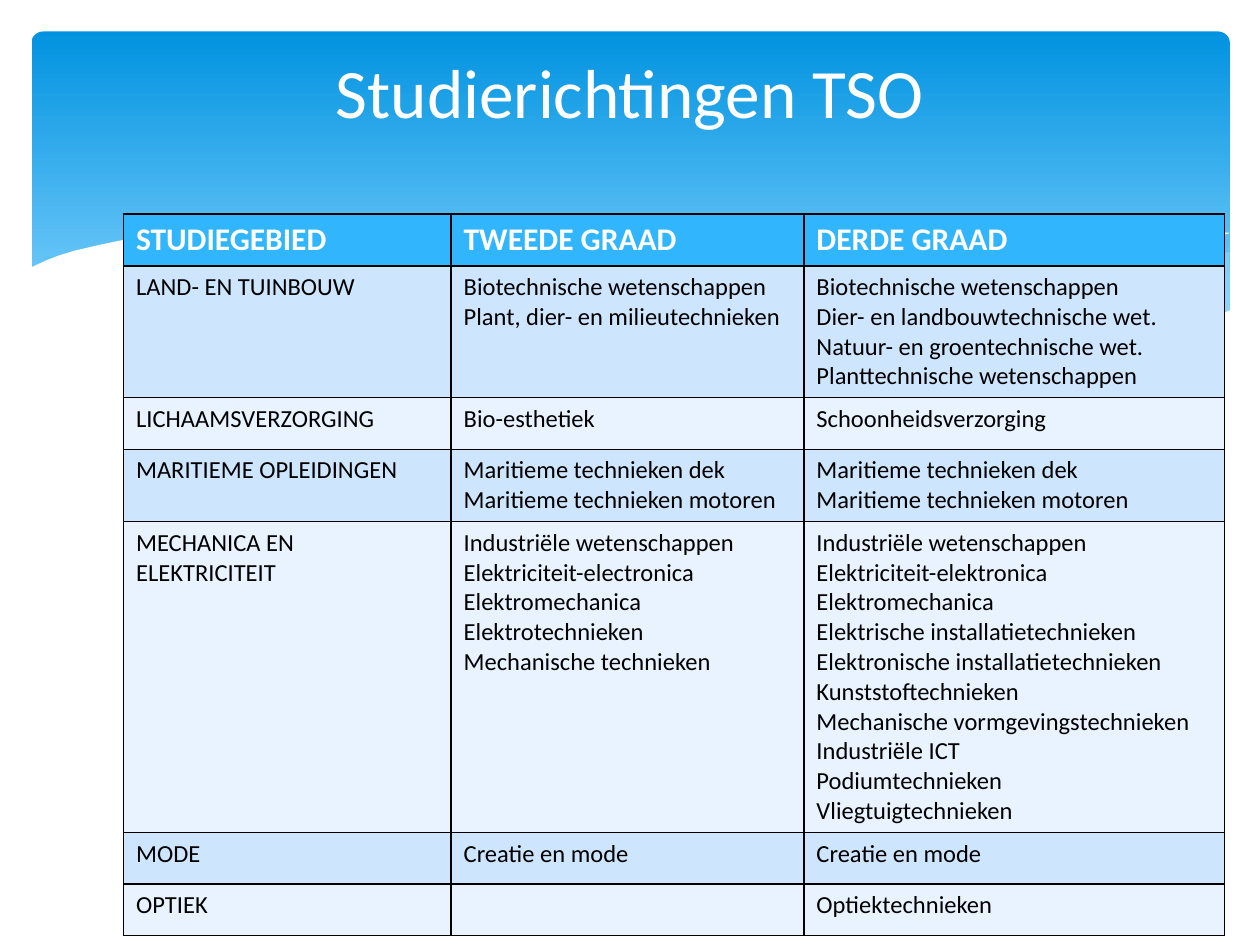
"""Build the slide with the table of TSO study programmes."""
from typing import NamedTuple, Optional

from pptx import Presentation
from pptx import util as u
from pptx.dml.color import RGBColor
from pptx.enum import shapes, text
from pptx.oxml import ns, xmlchemy as x

FONT = "Calibri"
Points = list[tuple[float, float]]


class Wave(NamedTuple):
    points: Points
    fill: Optional[str] = None
    opacity: int = 100


class Row(NamedTuple):
    area: str
    second: list[str]
    third: list[str]


WAVES = [
    Wave([(9.76, 2), (9.48, 2.04), (9.21, 2.1), (8.91, 2.16), (8.61, 2.23),
          (8.05, 2.37), (7.53, 2.48), (7.06, 2.57), (6.61, 2.65), (6.91, 2.69),
          (7.19, 2.72), (7.45, 2.75), (7.69, 2.77), (8.03, 2.78), (8.35, 2.77),
          (8.63, 2.75), (8.89, 2.72), (9.13, 2.67), (9.35, 2.62), (9.49, 2.57),
          (9.63, 2.52), (9.76, 2.47)], "C6E7FC", 29),
    Wave([(8.93, 2.73), (8.66, 2.69), (8.37, 2.65), (8.07, 2.6), (7.75, 2.54),
          (7.41, 2.47), (7.06, 2.4), (6.68, 2.31), (6.29, 2.22), (5.98, 2.14),
          (5.69, 2.08), (5.41, 2.03), (5.14, 1.98), (4.89, 1.94), (4.65, 1.91),
          (4.42, 1.89), (4.2, 1.87), (3.99, 1.86), (3.8, 1.85), (3.61, 1.85),
          (3.28, 1.87), (2.99, 1.89), (2.86, 1.91), (3.23, 1.96), (3.62, 2.03),
          (4.04, 2.11), (4.49, 2.22), (4.91, 2.32), (5.3, 2.4), (5.66, 2.48),
          (6.01, 2.55), (6.34, 2.61), (6.65, 2.66), (6.95, 2.7), (7.22, 2.74),
          (7.48, 2.76), (7.73, 2.77), (8.07, 2.78), (8.38, 2.78), (8.67, 2.76)],
         "C6E7FC", 40),
    Wave([(3.09, 1.95), (3.28, 1.92), (3.53, 1.89), (3.87, 1.87), (4.16, 1.87),
          (4.5, 1.88), (4.89, 1.9), (5.33, 1.94), (5.82, 2), (6.36, 2.08),
          (6.95, 2.19), (7.6, 2.33), (8.31, 2.51), (9.07, 2.72)]),
    Wave([(6.13, 2.57), (6.53, 2.46), (6.95, 2.35), (7.48, 2.23), (8.06, 2.1),
          (8.66, 1.99), (8.95, 1.94), (9.24, 1.9), (9.51, 1.87), (9.75, 1.85)]),
    Wave([(9.77, 2.46), (9.59, 2.53), (9.4, 2.59), (9.2, 2.65), (8.99, 2.69),
          (8.75, 2.73), (8.5, 2.75), (8.23, 2.77), (7.93, 2.76), (7.61, 2.75),
          (7.26, 2.72), (6.88, 2.68), (6.48, 2.62), (6.03, 2.54), (5.55, 2.45),
          (5.03, 2.33), (4.47, 2.2), (3.91, 2.07), (3.4, 1.97), (2.92, 1.9),
          (2.5, 1.86), (2.11, 1.84), (1.77, 1.84), (1.46, 1.85), (1.19, 1.87),
          (0.95, 1.91), (0.76, 1.95), (0.59, 1.99), (0.46, 2.03), (0.36, 2.07),
          (0.23, 2.13), (0.23, 3.29), (9.77, 3.29)], "FFFFFF"),
]

HEADERS = Row("STUDIEGEBIED", ["TWEEDE GRAAD"], ["DERDE GRAAD"])
MARITIME = ["Maritieme technieken dek", "Maritieme technieken motoren"]
ROWS = [
    Row("LAND- EN TUINBOUW",
        ["Biotechnische wetenschappen", "Plant, dier- en milieutechnieken"],
        ["Biotechnische wetenschappen", "Dier- en landbouwtechnische wet.",
         "Natuur- en groentechnische wet.", "Planttechnische wetenschappen"]),
    Row("LICHAAMSVERZORGING", ["Bio-esthetiek"], ["Schoonheidsverzorging"]),
    Row("MARITIEME OPLEIDINGEN", MARITIME, MARITIME),
    Row("MECHANICA EN ELEKTRICITEIT",
        ["Industriële wetenschappen", "Elektriciteit-electronica",
         "Elektromechanica", "Elektrotechnieken", "Mechanische technieken"],
        ["Industriële wetenschappen", "Elektriciteit-elektronica",
         "Elektromechanica", "Elektrische installatietechnieken",
         "Elektronische installatietechnieken", "Kunststoftechnieken",
         "Mechanische vormgevingstechnieken", "Industriële ICT",
         "Podiumtechnieken", "Vliegtuigtechnieken"]),
    Row("MODE", ["Creatie en mode"], ["Creatie en mode"]),
    Row("OPTIEK", [], ["Optiektechnieken"]),
]


def rgb(color: str) -> RGBColor:
    return RGBColor.from_string(color)


def add_banner(s) -> None:
    sp = s.shapes.add_shape(shapes.MSO_SHAPE.ROUNDED_RECTANGLE, u.Inches(0.25),
                            u.Inches(0.25), u.Inches(9.51), u.Inches(2.7))
    sp.adjustments[0] = 0.034
    sp.shadow.inherit = False
    sp.line.fill.background()
    sp.fill.gradient()
    sp.fill.gradient_angle = 270
    stops = [(0, "0293E0"), (0.9, "83D3FE")]
    for stop, (position, color) in zip(sp.fill.gradient_stops, stops):
        stop.position = position
        stop.color.rgb = rgb(color)


def add_wave(group, wave: Wave) -> None:
    start, *rest = [(u.Inches(px), u.Inches(py)) for px, py in wave.points]
    builder = group.shapes.build_freeform(*start, scale=1.0)
    builder.add_line_segments(rest, close=wave.fill is not None)
    sp = builder.convert_to_shape()
    sp.shadow.inherit = False
    if wave.fill is None:
        sp.fill.background()
        sp.line.color.rgb = rgb("FFFFFF")
        sp.line.width = u.Pt(0)
        return
    sp.line.fill.background()
    sp.fill.solid()
    sp.fill.fore_color.rgb = rgb(wave.fill)
    if wave.opacity < 100:
        color = sp.element.spPr.find(ns.qn("a:solidFill"))[0]
        alpha = x.OxmlElement("a:alpha")
        alpha.set("val", str(wave.opacity * 1000))
        color.append(alpha)


def add_borders(cell) -> None:
    tc_pr = cell._tc.get_or_add_tcPr()
    for side in ("a:lnL", "a:lnR", "a:lnT", "a:lnB"):
        line = x.OxmlElement(side)
        line.set("w", str(u.Pt(1)))
        fill = x.OxmlElement("a:solidFill")
        color = x.OxmlElement("a:srgbClr")
        color.set("val", "000000")
        fill.append(color)
        line.append(fill)
        tc_pr.append(line)


def fill_cell(cell, lines: list[str], fill: str, size: int, color: str, bold: bool) -> None:
    add_borders(cell)
    cell.fill.solid()
    cell.fill.fore_color.rgb = rgb(fill)
    cell.text_frame.text = "\n".join(lines)
    for p in cell.text_frame.paragraphs:
        p.font.name = FONT
        p.font.size = u.Pt(size)
        p.font.bold = bold
        p.font.color.rgb = rgb(color)


def add_programmes(s) -> None:
    widths = [2.6, 2.8, 3.34]
    frame = s.shapes.add_table(len(ROWS) + 1, len(widths), u.Inches(0.98), u.Inches(1.7),
                               u.Inches(sum(widths)), u.Inches(5.66))
    table = frame.table
    for column, width in zip(table.columns, widths):
        column.width = u.Inches(width)
    for i, row in enumerate([HEADERS, *ROWS]):
        table.rows[i].height = u.Inches(0.41)
        if i == 0:
            style = ("31B6FD", 18, "FFFFFF", True)
        else:
            style = ("CEE5FE" if i % 2 else "E8F3FF", 14, "000000", False)
        for j, lines in enumerate([[row.area], row.second, row.third]):
            fill_cell(table.cell(i, j), lines, *style)
    frame.height = u.Inches(5.66)


def set_title(s, title: str) -> None:
    sp = s.shapes.title
    sp.left, sp.top = u.Inches(0.5), u.Inches(0.37)
    sp.width, sp.height = u.Inches(9), u.Inches(0.7)
    tf = sp.text_frame
    tf.text = title
    tf.vertical_anchor = text.MSO_ANCHOR.MIDDLE
    p = tf.paragraphs[0]
    p.alignment = text.PP_ALIGN.CENTER
    p.font.name = FONT
    p.font.size = u.Pt(39.6)
    p.font.color.rgb = rgb("FFFFFF")
    s.shapes.element.append(sp.element)


def main() -> None:
    prs = Presentation()
    prs.slide_width, prs.slide_height = u.Inches(10), u.Inches(7.5)
    s = prs.slides.add_slide(prs.slide_layouts[5])
    add_banner(s)
    group = s.shapes.add_group_shape()
    for wave in WAVES:
        add_wave(group, wave)
    add_programmes(s)
    set_title(s, "Studierichtingen TSO")
    prs.save("out.pptx")


if __name__ == "__main__":
    main()
